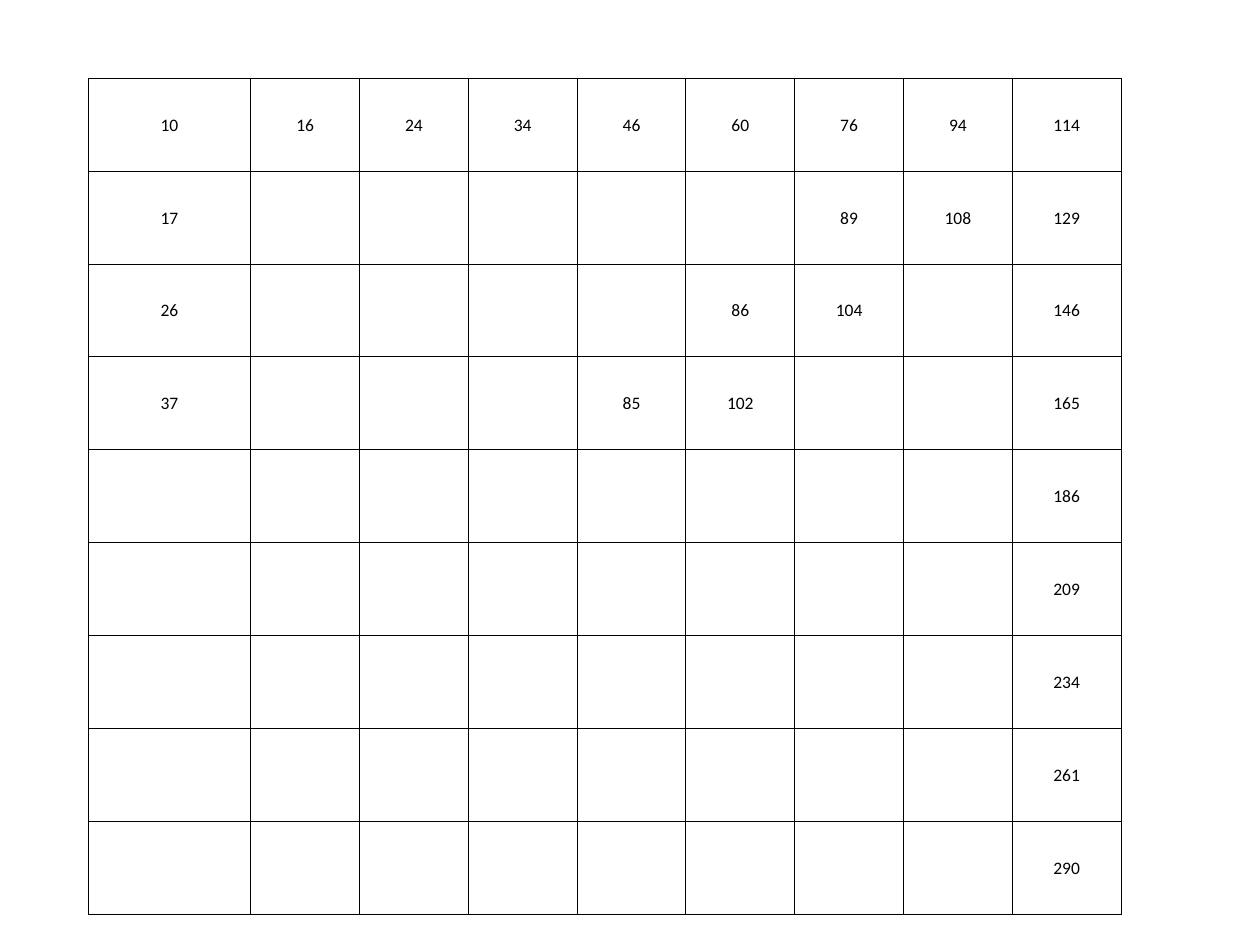
from lxml import etree
from pptx import Presentation
from pptx.dml.color import RGBColor
from pptx.enum.text import MSO_ANCHOR, PP_ALIGN
from pptx.oxml.ns import qn
from pptx.util import Inches, Pt

CENTER = PP_ALIGN.CENTER
MIDDLE = MSO_ANCHOR.MIDDLE
BLACK = RGBColor(0x00, 0x00, 0x00)
BORDER_WIDTH = Pt(0.5)
INSET = Inches(0.01)

# Each row maps a column index to its number; other cells stay empty.
NUMBER_ROWS = [
    dict(enumerate([10, 16, 24, 34, 46, 60, 76, 94, 114])),
    {0: 17, 6: 89, 7: 108, 8: 129},
    {0: 26, 5: 86, 6: 104, 8: 146},
    {0: 37, 4: 85, 5: 102, 8: 165},
    {8: 186},
    {8: 209},
    {8: 234},
    {8: 261},
    {8: 290},
]
SIZE = len(NUMBER_ROWS)


def add_borders(cell):
    """Draw a thin black line on all four sides of the cell."""
    properties = cell._tc.get_or_add_tcPr()
    for side in ("a:lnL", "a:lnR", "a:lnT", "a:lnB"):
        line = etree.SubElement(properties, qn(side), w=str(BORDER_WIDTH))
        fill = etree.SubElement(line, qn("a:solidFill"))
        etree.SubElement(fill, qn("a:srgbClr"), val=str(BLACK))


prs = Presentation()
prs.slide_width, prs.slide_height = Inches(10), Inches(7.5)
slide = prs.slides.add_slide(prs.slide_layouts[6])

grid_width, grid_height = Inches(8.2), Inches(6.64)
first_column = Inches(1.29)
grid = slide.shapes.add_table(
    SIZE, SIZE, Inches(0.7), Inches(0.62), grid_width, grid_height
).table
grid.first_row = False
grid.horz_banding = False

for column in grid.columns:
    column.width = (grid_width - first_column) // (SIZE - 1)
grid.columns[0].width = first_column
for row in grid.rows:
    row.height = grid_height // SIZE

for row_index, numbers in enumerate(NUMBER_ROWS):
    for column_index in range(SIZE):
        cell = grid.cell(row_index, column_index)
        add_borders(cell)
        cell.fill.background()
        if column_index not in numbers:
            continue
        cell.vertical_anchor = MIDDLE
        cell.margin_left = cell.margin_right = cell.margin_top = INSET
        cell.margin_bottom = 0
        paragraph = cell.text_frame.paragraphs[0]
        paragraph.text = str(numbers[column_index])
        paragraph.alignment = CENTER
        font = paragraph.runs[0].font
        font.name = "Calibri"
        font.size = Pt(10)
        font.color.rgb = BLACK

prs.save("out.pptx")
